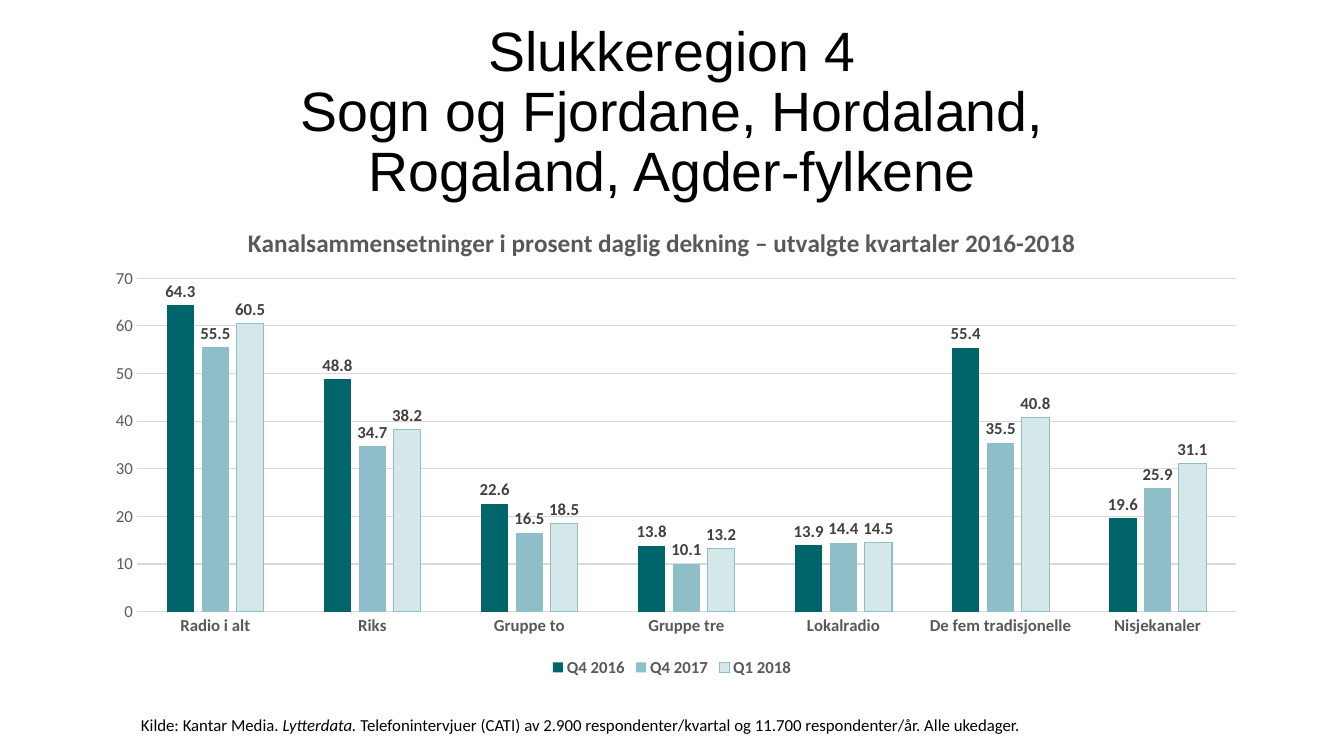
from dataclasses import dataclass
from lxml.etree import SubElement
from pptx import Presentation
from pptx.chart.data import CategoryChartData
from pptx.dml.color import RGBColor
from pptx.enum.chart import (XL_CHART_TYPE, XL_LABEL_POSITION,
                             XL_LEGEND_POSITION, XL_TICK_MARK)
from pptx.enum.text import MSO_ANCHOR, PP_ALIGN
from pptx.oxml.ns import qn
from pptx.util import Inches, Pt


@dataclass(frozen=True)
class Theme:
    head: str = "Arial"
    body: str = "Calibri"
    ink: str = "000000"
    gray: str = "595959"
    label: str = "404040"
    grid: str = "D9D9D9"
    bars: tuple = ("00646B", "8EBEC7", "D5E8E9")
    edge: str = "8EBEC7"
    big: float = 39.6
    mid: float = 18
    small: float = 12


THEME = Theme()
WIDE, HIGH = 13.33, 7.5
GROUPS = ("Radio i alt", "Riks", "Gruppe to", "Gruppe tre", "Lokalradio",
          "De fem tradisjonelle", "Nisjekanaler")
SERIES = {
    "Q4 2016": (64.3, 48.8, 22.6, 13.8, 13.9, 55.4, 19.6),
    "Q4 2017": (55.5, 34.7, 16.5, 10.1, 14.4, 35.5, 25.9),
    "Q1 2018": (60.5, 38.2, 18.5, 13.2, 14.5, 40.8, 31.1),
}


def style(font, size, color, name=THEME.body, bold=False):
    font.size, font.name, font.bold = Pt(size), name, bold
    font.color.rgb = RGBColor.from_string(color)


def rule(line, color):
    line.color.rgb = RGBColor.from_string(color)
    line.width = Pt(0.75)


def place(node, index, **shares):
    """Lay out a chart part by shares of the chart's size."""
    for old in node.findall(qn("c:layout")):
        node.remove(old)
    layout = SubElement(node, qn("c:layout"))
    node.insert(index, layout)
    manual = SubElement(layout, qn("c:manualLayout"))
    modes = {"xMode": "edge", "yMode": "edge"}
    if "w" in shares:
        modes = {"layoutTarget": "inner", **modes}
    for key, val in {**modes, **shares}.items():
        SubElement(manual, qn("c:" + key)).set("val", str(val))


def add_text(slide, box):
    frame = slide.shapes.add_textbox(*map(Inches, box)).text_frame
    frame.word_wrap = True
    return frame


def add_title(slide, box):
    frame = add_text(slide, box)
    frame.vertical_anchor = MSO_ANCHOR.MIDDLE
    para = frame.paragraphs[0]
    para.text = ("Slukkeregion 4\vSogn og Fjordane, Hordaland,\v"
                 "Rogaland, Agder-fylkene")
    para.alignment = PP_ALIGN.CENTER
    para.line_spacing = 0.9
    style(para.font, THEME.big, THEME.ink, THEME.head)


def add_bars(slide, box):
    data = CategoryChartData(number_format="0.0")
    data.categories = GROUPS
    for name, vals in SERIES.items():
        data.add_series(name, vals)
    chart = slide.shapes.add_chart(XL_CHART_TYPE.COLUMN_CLUSTERED,
                                   *map(Inches, box), data).chart
    style(chart.font, 10, THEME.ink)

    # Heading and plot area
    chart.has_title = True
    title = chart.chart_title
    para = title.text_frame.paragraphs[0]
    para.text = ("Kanalsammensetninger i prosent daglig dekning – "
                 "utvalgte kvartaler 2016-2018")
    style(para.font, THEME.mid, THEME.gray, bold=True)
    place(title._element, 1, x=0.13, y=0.04)
    area = chart._chartSpace.find(".//" + qn("c:plotArea"))
    place(area, 0, x=0.038, y=0.16, w=0.949, h=0.695)

    # Axes
    cat, val = chart.category_axis, chart.value_axis
    for axis in (cat, val):
        axis.major_tick_mark = axis.minor_tick_mark = XL_TICK_MARK.NONE
        style(axis.tick_labels.font, THEME.small, THEME.gray,
              bold=axis is cat)
    rule(cat.format.line, THEME.grid)
    val.format.line.fill.background()
    val.has_major_gridlines = True
    rule(val.major_gridlines.format.line, THEME.grid)
    val.minimum_scale, val.maximum_scale, val.major_unit = 0, 70, 10
    val.tick_labels.number_format = "0"
    val.tick_labels.number_format_is_linked = False

    # Columns and their values
    plot = chart.plots[0]
    plot.gap_width, plot.overlap = 219, -27
    plot.vary_by_categories = False
    for bar, color in zip(plot.series, THEME.bars):
        bar.format.fill.solid()
        bar.format.fill.fore_color.rgb = RGBColor.from_string(color)
        bar.format.line.fill.background()
        labels = bar.data_labels
        labels.show_value = True
        labels.position = XL_LABEL_POSITION.OUTSIDE_END
        labels.number_format = "0.0"
        labels.number_format_is_linked = False
        style(labels.font, THEME.small, THEME.label, bold=True)
    rule(bar.format.line, THEME.edge)

    # Legend
    chart.has_legend = True
    chart.legend.position = XL_LEGEND_POSITION.BOTTOM
    chart.legend.include_in_layout = False
    style(chart.legend.font, THEME.small, THEME.gray, bold=True)


def add_note(slide, box):
    para = add_text(slide, box).paragraphs[0]
    for part in ("Kilde: Kantar Media. ", "Lytterdata. ",
                 "Telefonintervjuer (CATI) av 2.900 respondenter/kvartal "
                 "og 11.700 respondenter/år. Alle ukedager."):
        run = para.add_run()
        run.text = part
        run.font.italic = part.startswith("Lytter")
    style(para.font, THEME.small, THEME.ink)


def main():
    deck = Presentation()
    deck.slide_width, deck.slide_height = Inches(WIDE), Inches(HIGH)
    slide = deck.slides.add_slide(deck.slide_layouts[6])
    left = 0.92
    span = WIDE - 2 * left
    add_title(slide, (left, 0.4, span, 1.45))
    add_bars(slide, (left, 2, span, 4.76))
    add_note(slide, (1.3, 7.04, 11.23, 0.3))
    deck.save("out.pptx")


if __name__ == "__main__":
    main()
